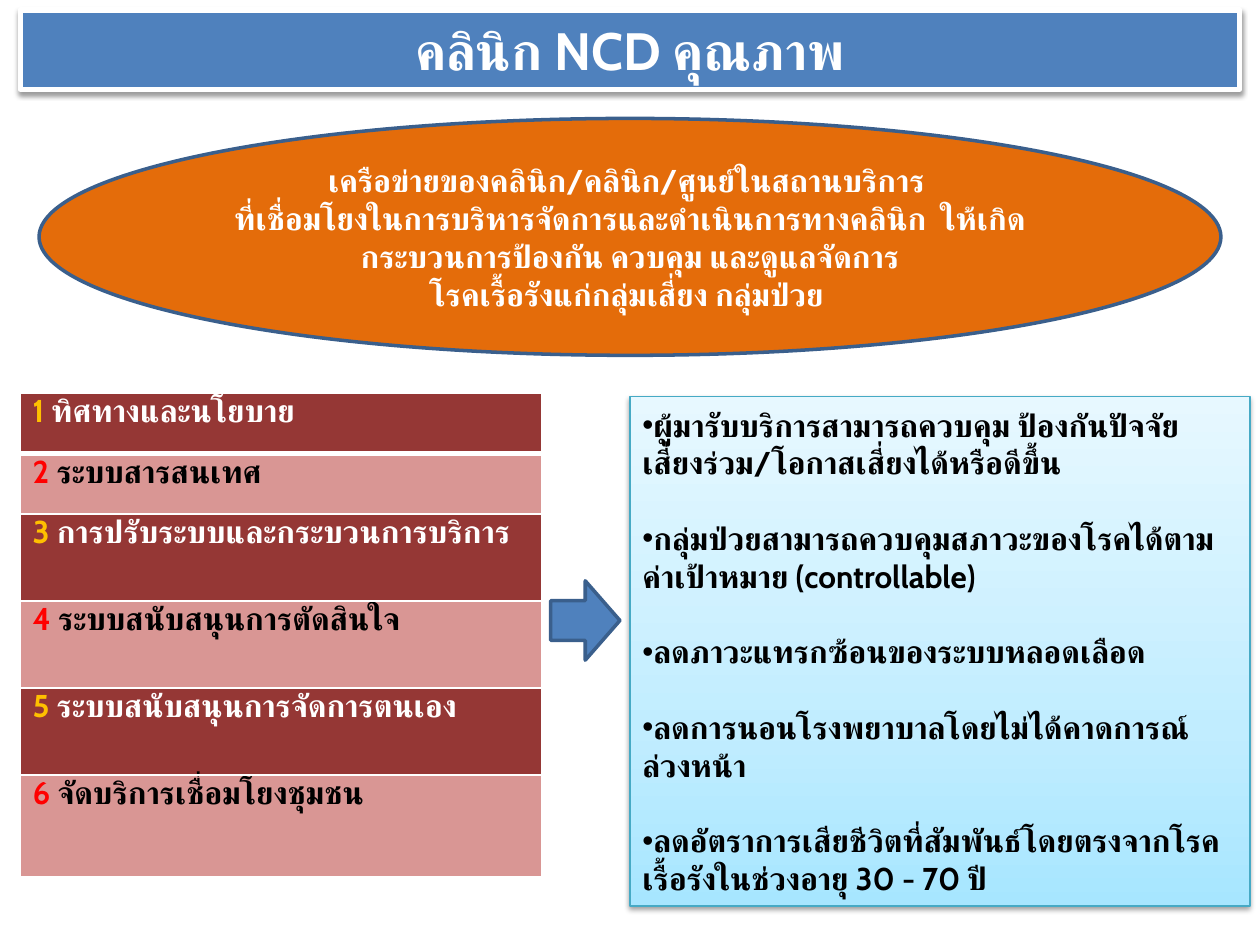
from dataclasses import dataclass

from lxml import etree
from pptx import Presentation
from pptx.dml.color import RGBColor
from pptx.enum.shapes import MSO_SHAPE
from pptx.enum.text import MSO_ANCHOR, PP_ALIGN
from pptx.oxml.ns import qn
from pptx.util import Inches, Pt

RECT, OVAL, ARROW = MSO_SHAPE.RECTANGLE, MSO_SHAPE.OVAL, MSO_SHAPE.RIGHT_ARROW
LEFT, CENTER = PP_ALIGN.LEFT, PP_ALIGN.CENTER
MIDDLE = MSO_ANCHOR.MIDDLE
FONT = "Cabin"
WHITE, BLACK, BLUE, NAVY = "FFFFFF", "000000", "4F81BD", "3A5F8C"


@dataclass
class Box:
    kind: int
    left: float
    top: float
    width: float
    height: float
    fill: str
    line: str
    weight: float
    shadow: bool = False


@dataclass
class Band:
    fill: str
    number: str
    text: str


TITLE = Box(RECT, 0.16, 0.08, 9.68, 0.63, BLUE, WHITE, 3, True)
OUTCOMES = Box(RECT, 5, 3.15, 4.92, 4.04, "C1EDFF", "46AAC5", 0.75, True)
NETWORK = Box(OVAL, 0.31, 0.94, 9.38, 1.88, "E46C0A", NAVY, 2)
FLOW = Box(ARROW, 4.37, 4.61, 0.55, 0.63, BLUE, NAVY, 2)

BANDS = [Band("953735", "FFC000", WHITE), Band("D99694", "FF0000", BLACK)]
COMPONENTS = [
    ("ทิศทางและนโยบาย", 0.48),
    ("ระบบสารสนเทศ", 0.48),
    ("การปรับระบบและกระบวนการบริการ", 0.69),
    ("ระบบสนับสนุนการตัดสินใจ", 0.69),
    ("ระบบสนับสนุนการจัดการตนเอง", 0.69),
    ("จัดบริการเชื่อมโยงชุมชน", 0.81),
]
NETWORK_LINES = [
    "เครือข่ายของคลินิก/คลินิก/ศูนย์ในสถานบริการ ",
    "ที่เชื่อมโยงในการบริหารจัดการและดำเนินการทางคลินิก  ให้เกิดกระบวนการป้องกัน ควบคุม และดูแลจัดการ",
    "โรคเรื้อรังแก่กลุ่มเสี่ยง กลุ่มป่วย ",
]
OUTCOME_LINES = [
    "ผู้มารับบริการสามารถควบคุม ป้องกันปัจจัยเสี่ยงร่วม/โอกาสเสี่ยงได้หรือดีขึ้น",
    "กลุ่มป่วยสามารถควบคุมสภาวะของโรคได้ตามค่าเป้าหมาย (controllable)",
    "ลดภาวะแทรกซ้อนของระบบหลอดเลือด",
    "ลดการนอนโรงพยาบาลโดยไม่ได้คาดการณ์ล่วงหน้า",
    "ลดอัตราการเสียชีวิตที่สัมพันธ์โดยตรงจากโรคเรื้อรังในช่วงอายุ 30 - 70 ปี",
]


def rgb(color: str) -> RGBColor:
    return RGBColor.from_string(color)


def add_node(parent, tag: str, **attrs):
    return etree.SubElement(parent, qn(tag), {k: str(v) for k, v in attrs.items()})


def add_run(p, text: str, color: str = WHITE, size: float = 18) -> None:
    r = p.add_run()
    r.text = text
    r.font.name, r.font.size, r.font.bold = FONT, Pt(size), True
    r.font.color.rgb = rgb(color)
    add_node(r.font._element, "a:cs", typeface=FONT)


def add_text(tf, lines: list[str], color: str = WHITE, size: float = 18,
             align: int = CENTER, gap: float = 0, bullet: str = "") -> None:
    tf.word_wrap = True
    tf.vertical_anchor = MIDDLE
    for i, line in enumerate(lines):
        p = tf.paragraphs[0] if i == 0 else tf.add_paragraph()
        p.alignment = align
        p.space_before = Pt(gap if i else 0)
        if bullet:
            pPr = p._p.get_or_add_pPr()
            add_node(pPr, "a:buFont", typeface="Arial")
            add_node(pPr, "a:buChar", char=bullet)
        add_run(p, line, color, size)


def add_box(s, box: Box):
    sp = s.shapes.add_shape(box.kind, Inches(box.left), Inches(box.top),
                            Inches(box.width), Inches(box.height))
    sp.fill.solid()
    sp.fill.fore_color.rgb = rgb(box.fill)
    sp.line.color.rgb = rgb(box.line)
    sp.line.width = Pt(box.weight)
    sp.shadow.inherit = False
    if box.shadow:
        effects = sp._element.spPr.find(qn("a:effectLst"))
        outer = add_node(effects, "a:outerShdw", blurRad=Pt(3.1), dist=Pt(1.6),
                         dir=5400000, rotWithShape=0)
        add_node(add_node(outer, "a:srgbClr", val=BLACK), "a:alpha", val=38000)
    return sp


def set_gradient(sp, stops: list[tuple[int, str]], angle: float) -> None:
    sp.fill.gradient()
    sp.fill.gradient_angle = angle
    gs_list = sp._element.spPr.find(qn("a:gradFill")).find(qn("a:gsLst"))
    gs_list.clear()
    for pos, color in stops:
        add_node(add_node(gs_list, "a:gs", pos=pos * 1000), "a:srgbClr", val=color)


def set_borders(cell, top: float, bottom: float) -> None:
    tcPr = cell._tc.get_or_add_tcPr()
    for side, weight in zip("LRTB", (1, 1, top, bottom)):
        ln = add_node(tcPr, f"a:ln{side}", w=Pt(weight))
        add_node(add_node(ln, "a:solidFill"), "a:srgbClr", val=WHITE)


def add_components(s, left: float, top: float, width: float) -> None:
    height = sum(h for _, h in COMPONENTS)
    table = s.shapes.add_table(len(COMPONENTS), 1, Inches(left), Inches(top),
                               Inches(width), Inches(height)).table
    for i, (name, row_height) in enumerate(COMPONENTS):
        band = BANDS[i % 2]
        table.rows[i].height = Inches(row_height)
        cell = table.cell(i, 0)
        set_borders(cell, 3 if i == 1 else 1, 3 if i == 0 else 1)
        cell.fill.solid()
        cell.fill.fore_color.rgb = rgb(band.fill)
        p = cell.text_frame.paragraphs[0]
        p.line_spacing = Pt(18)
        add_run(p, f"{i + 1} ", band.number)
        add_run(p, name, band.text)


def main() -> None:
    prs = Presentation()
    prs.slide_width, prs.slide_height = Inches(10), Inches(7.5)
    s = prs.slides.add_slide(prs.slide_layouts[6])

    add_text(add_box(s, TITLE).text_frame, ["คลินิก NCD คุณภาพ"], size=30)
    add_components(s, 0.16, 3.12, 4.14)
    outcomes = add_box(s, OUTCOMES)
    set_gradient(outcomes, [(0, "A7E6FF"), (35, "C1EDFF"), (100, "E7F8FF")], 90)
    add_text(outcomes.text_frame, OUTCOME_LINES, color=BLACK, align=LEFT,
             gap=21.6, bullet="•")
    add_text(add_box(s, NETWORK).text_frame, NETWORK_LINES)
    add_box(s, FLOW)

    prs.save("out.pptx")


if __name__ == "__main__":
    main()
